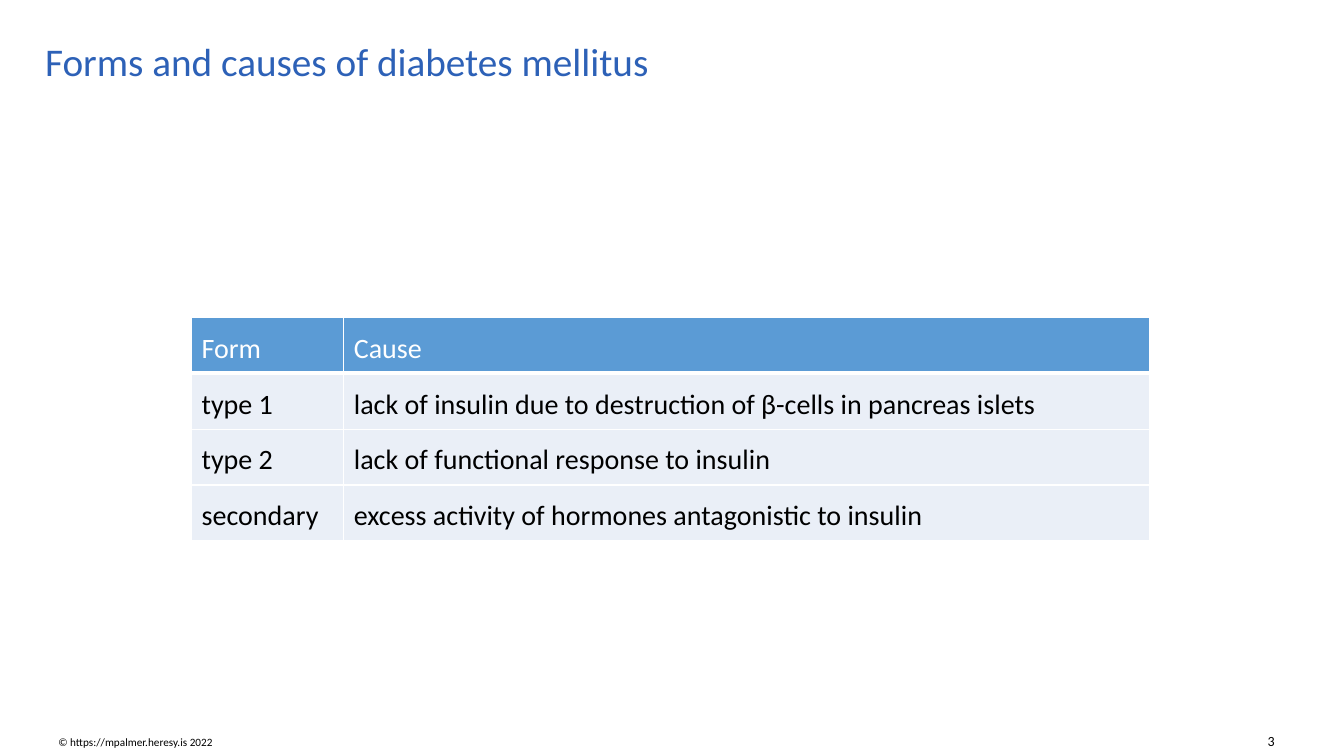
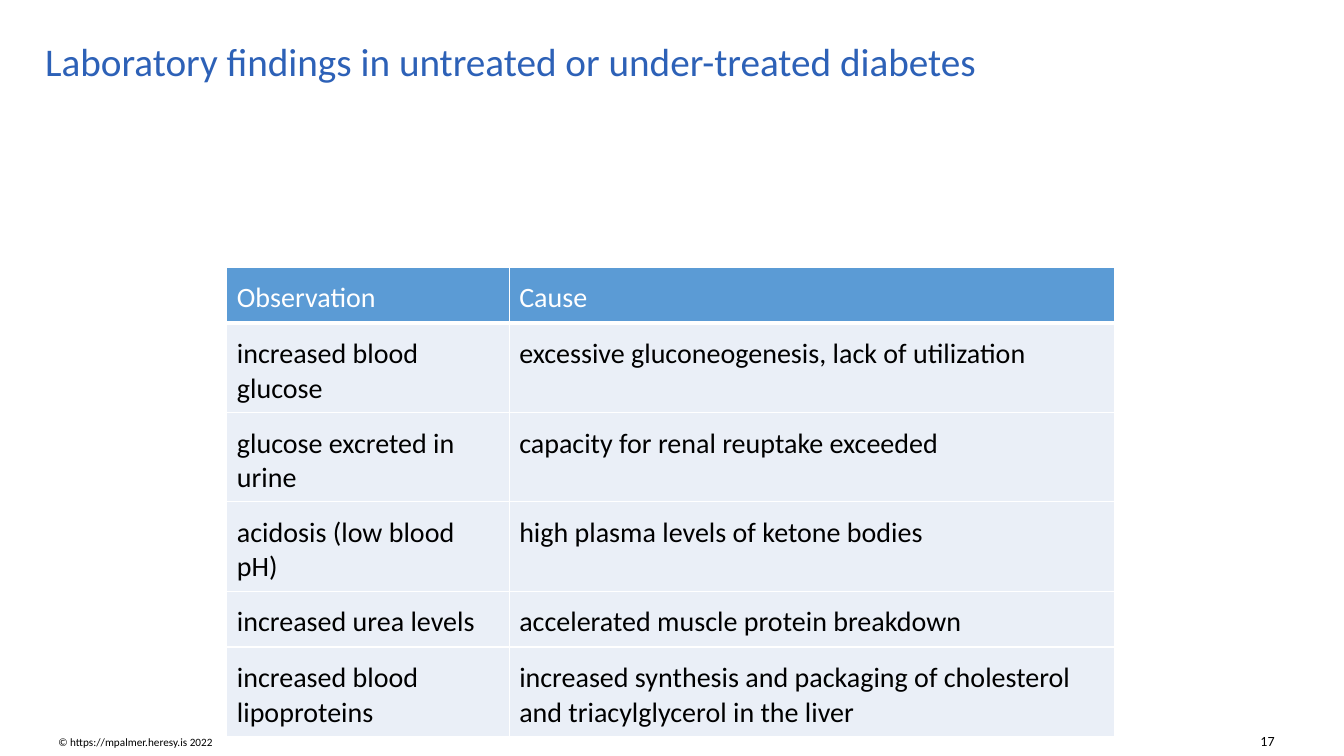
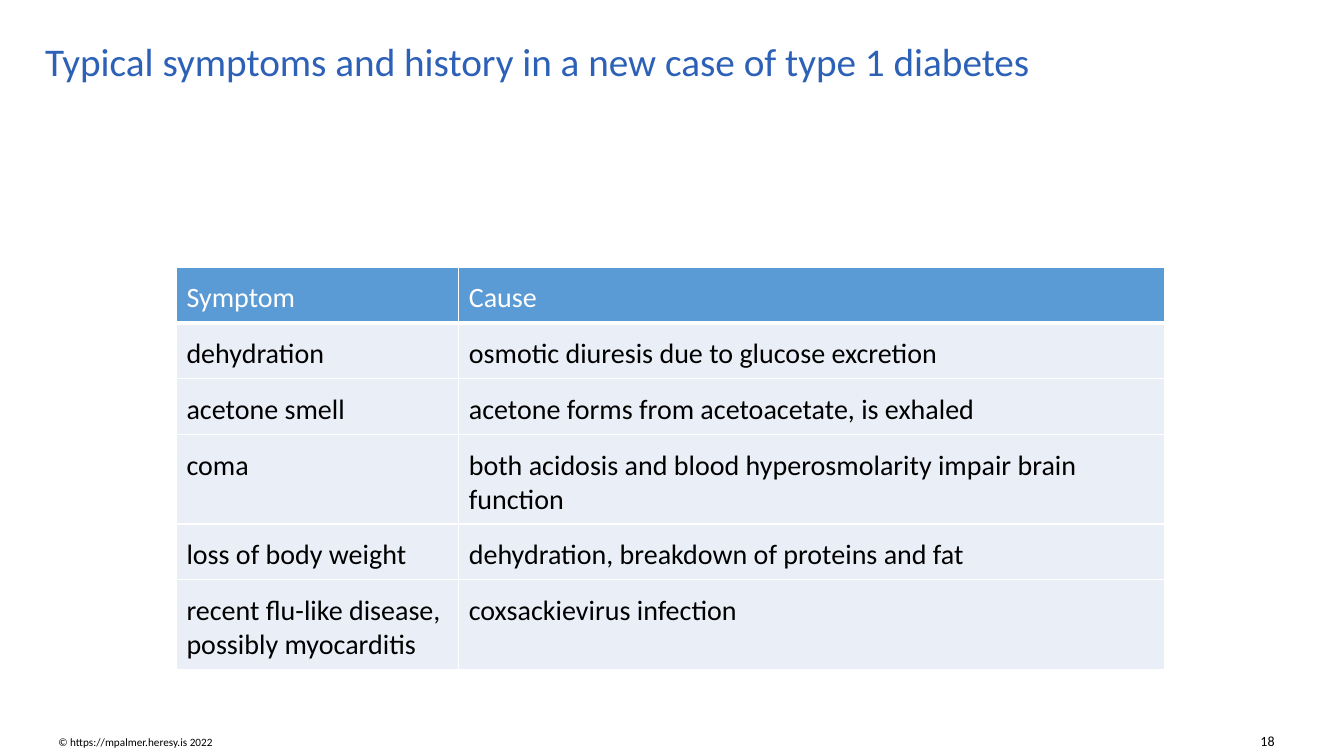
from dataclasses import dataclass

from lxml.etree import SubElement
from pptx import Presentation
from pptx.dml.color import RGBColor
from pptx.enum.text import MSO_ANCHOR, PP_ALIGN
from pptx.oxml.ns import qn
from pptx.slide import Slide
from pptx.table import _Cell
from pptx.util import Inches, Pt

# Shared style
FONT = "Calibri"
TITLE_BLUE = RGBColor(0x2D, 0x61, 0xB7)
HEADER_BLUE = RGBColor(0x5B, 0x9B, 0xD5)
ROW_TINT = RGBColor(0xEA, 0xEF, 0xF7)
WHITE = RGBColor(0xFF, 0xFF, 0xFF)
BLACK = RGBColor(0x00, 0x00, 0x00)

SLIDE_W, SLIDE_H = 13.33, 7.5
TABLE_CX, TABLE_CY = 6.65, 4.15  # every table is centred here
ROW_H = 0.5
FOOTER = "© https://mpalmer.heresy.is 2022"


@dataclass(frozen=True)
class TextStyle:
    box: tuple[float, float, float, float]
    size: int
    color: RGBColor
    anchor: MSO_ANCHOR
    align: PP_ALIGN = PP_ALIGN.LEFT
    line_spacing: float = 1.0


TITLE_STYLE = TextStyle((0.35, 0.24, 12.7, 0.78), 28, TITLE_BLUE,
                        MSO_ANCHOR.MIDDLE, line_spacing=0.9)
FOOTER_STYLE = TextStyle((0.48, 7.25, 3.14, 0.23), 8, BLACK, MSO_ANCHOR.BOTTOM)
NUMBER_STYLE = TextStyle((12.04, 7.21, 0.7, 0.27), 10, BLACK,
                         MSO_ANCHOR.BOTTOM, PP_ALIGN.RIGHT)


@dataclass(frozen=True)
class TableSlide:
    number: int
    title: str
    col_widths: tuple[float, ...]
    rows: tuple[tuple[str, ...], ...]  # first row is the header


# Content
SLIDES = (
    TableSlide(3, "Forms and causes of diabetes mellitus", (1.51, 7.99), (
        ("Form", "Cause"),
        ("type 1", "lack of insulin due to destruction of β-cells in pancreas islets"),
        ("type 2", "lack of functional response to insulin"),
        ("secondary", "excess activity of hormones antagonistic to insulin"),
    )),
    TableSlide(17, "Laboratory findings in untreated or under-treated diabetes", (2.8, 6), (
        ("Observation", "Cause"),
        ("increased blood glucose", "excessive gluconeogenesis, lack of utilization"),
        ("glucose excreted in urine", "capacity for renal reuptake exceeded"),
        ("acidosis (low blood pH)", "high plasma levels of ketone bodies"),
        ("increased urea levels", "accelerated muscle protein breakdown"),
        ("increased blood lipoproteins",
         "increased synthesis and packaging of cholesterol and triacylglycerol in the liver"),
    )),
    TableSlide(18, "Typical symptoms and history in a new case of type 1 diabetes", (2.8, 7), (
        ("Symptom", "Cause"),
        ("dehydration", "osmotic diuresis due to glucose excretion"),
        ("acetone smell", "acetone forms from acetoacetate, is exhaled"),
        ("coma", "both acidosis and blood hyperosmolarity impair brain function"),
        ("loss of body weight", "dehydration, breakdown of proteins and fat"),
        ("recent flu-like disease, possibly myocarditis", "coxsackievirus infection"),
    )),
)


def add_text(s: Slide, text: str, style: TextStyle) -> None:
    sp = s.shapes.add_textbox(*map(Inches, style.box))
    tf = sp.text_frame
    tf.word_wrap = True
    tf.vertical_anchor = style.anchor
    p = tf.paragraphs[0]
    p.text = text
    p.alignment = style.align
    p.line_spacing = style.line_spacing
    p.font.name, p.font.size = FONT, Pt(style.size)
    p.font.color.rgb = style.color


def add_borders(cell: _Cell, bottom: int) -> None:
    """White lines on all four sides; widths in points."""
    tc_pr = cell._tc.get_or_add_tcPr()
    for tag, width in (("a:lnL", 1), ("a:lnR", 1), ("a:lnT", 1), ("a:lnB", bottom)):
        ln = SubElement(tc_pr, qn(tag), w=str(Pt(width)))
        fill = SubElement(ln, qn("a:solidFill"))
        SubElement(fill, qn("a:srgbClr"), val=str(WHITE))


def style_cell(cell: _Cell, text: str, header: bool) -> None:
    add_borders(cell, bottom=3 if header else 1)
    cell.fill.solid()
    cell.fill.fore_color.rgb = HEADER_BLUE if header else ROW_TINT
    cell.margin_left = cell.margin_right = Inches(0.1)
    cell.margin_top, cell.margin_bottom = Inches(0.14), Inches(0.08)
    p = cell.text_frame.paragraphs[0]
    p.text = text
    p.font.name, p.font.size, p.font.bold = FONT, Pt(20), False
    p.font.color.rgb = WHITE if header else BLACK


def add_centred_table(s: Slide, content: TableSlide) -> None:
    width, height = sum(content.col_widths), ROW_H * len(content.rows)
    box = (TABLE_CX - width / 2, TABLE_CY - height / 2, width, height)
    table = s.shapes.add_table(len(content.rows), len(content.col_widths),
                               *map(Inches, box)).table
    table.horz_banding = False
    for col, col_width in zip(table.columns, content.col_widths):
        col.width = Inches(col_width)
    for i, row in enumerate(content.rows):
        for j, text in enumerate(row):
            style_cell(table.cell(i, j), text, header=i == 0)


def main() -> None:
    prs = Presentation()
    prs.slide_width, prs.slide_height = Inches(SLIDE_W), Inches(SLIDE_H)
    for content in SLIDES:
        s = prs.slides.add_slide(prs.slide_layouts[6])
        add_text(s, FOOTER, FOOTER_STYLE)
        add_text(s, str(content.number), NUMBER_STYLE)
        add_text(s, content.title, TITLE_STYLE)
        add_centred_table(s, content)
    prs.save("out.pptx")


if __name__ == "__main__":
    main()
